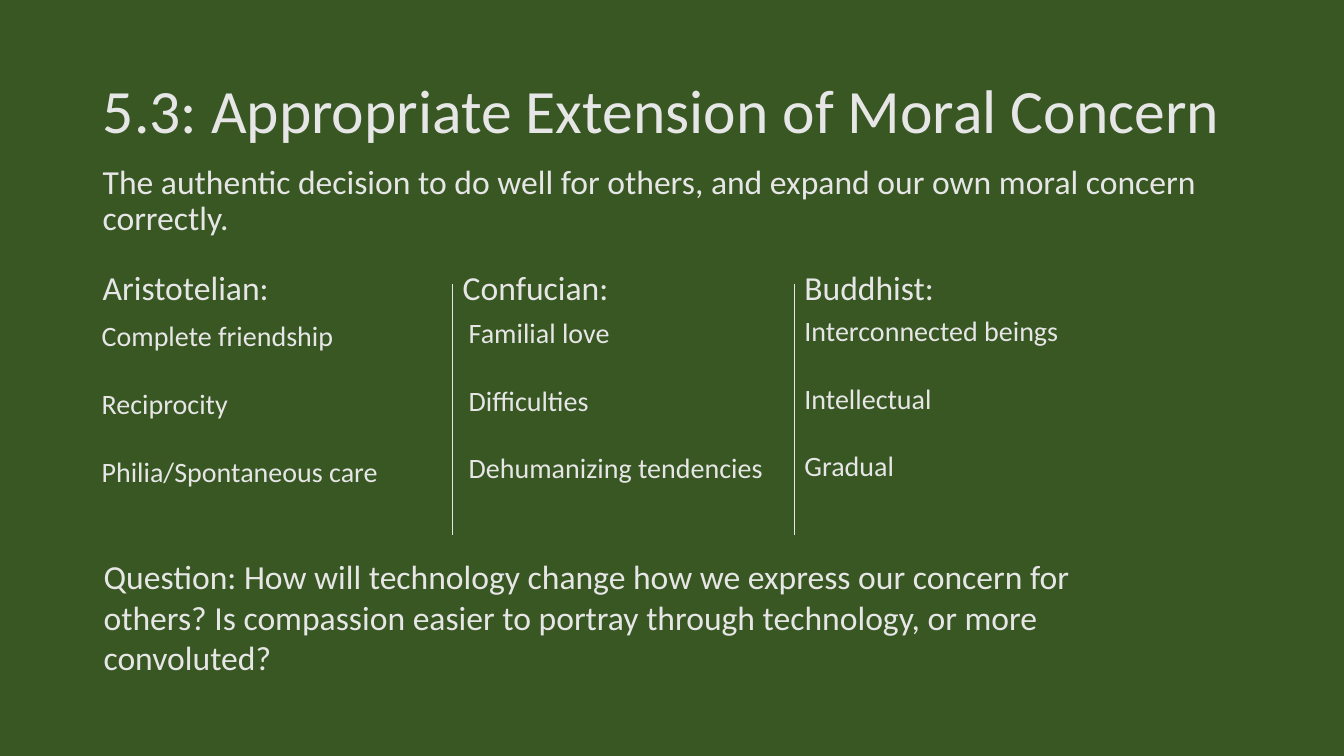
"""Build the slide on the appropriate extension of moral concern."""
from lxml import etree
from pptx import Presentation
from pptx.dml.color import RGBColor
from pptx.enum import shapes, text
from pptx.oxml.ns import qn
from pptx.util import Inches, Pt

TITLE = "5.3: Appropriate Extension of Moral Concern"
SUMMARY = ("The authentic decision to do well for others, and expand our own "
           "moral concern correctly.")
TRADITIONS = [
    {"name": "Aristotelian:", "head": (0.92, 1.94), "list": (0.91, 3.11, 2.97),
     "points": ["Complete friendship", "Reciprocity", "Philia/Spontaneous care"]},
    {"name": "Confucian:", "head": (4.49, 1.75), "list": (4.55, 3.08, 3.15),
     "points": ["Familial love", "Difficulties", "Dehumanizing tendencies"]},
    {"name": "Buddhist:", "head": (7.88, 1.5), "list": (7.88, 3.06, 2.74),
     "points": ["Interconnected beings", "Intellectual", "Gradual"]},
]
QUESTION = ("Question: How will technology change how we express our concern for "
            "others? Is compassion easier to portray through technology, or more "
            "convoluted?")

THEME = {
    "font": "Calibri", "ink": RGBColor.from_string("E7E6E6"),
    "ground": RGBColor.from_string("385723"),
    "title": Pt(44), "body": Pt(24), "point": Pt(20), "gap": Pt(24.4), "rule": Pt(0.5),
}
HEAD_TOP, HEAD_H, LIST_H = 2.6, 0.5, 1.78
RULE_TOP, RULE_BOTTOM = 2.82, 5.31
FIT, FIXED = text.MSO_AUTO_SIZE.SHAPE_TO_FIT_TEXT, text.MSO_AUTO_SIZE.NONE
TIGHT = {"line_spacing": 0.9}


def assign(target, values):
    """Set each attribute of target named in values."""
    for name, value in values.items():
        setattr(target, name, value)


def write(sp, lines, size, frame, para, gap=None):
    """Fill a shape with formatted paragraphs, spaced by gap after the first."""
    tf = sp.text_frame
    assign(tf, frame)
    for i, line in enumerate(lines):
        p = tf.add_paragraph() if i else tf.paragraphs[0]
        assign(p, {"alignment": text.PP_ALIGN.LEFT, **para})
        if i and gap is not None:
            p.space_before = gap
        r = p.add_run()
        r.text = line
        assign(r.font, {"name": THEME["font"], "size": THEME[size]})
        r.font.color.rgb = THEME["ink"]


def add_text(slide, box, lines, size="body", wrap=True, fit=FIT, para=None, gap=None):
    """Add a text box at box, given in inches."""
    sp = slide.shapes.add_textbox(*map(Inches, box))
    write(sp, lines, size, {"word_wrap": wrap, "auto_size": fit}, para or {}, gap)


def add_rule(slide, x):
    """Add a thin vertical divider at x."""
    ends = map(Inches, (x, RULE_TOP, x, RULE_BOTTOM))
    line = slide.shapes.add_connector(shapes.MSO_CONNECTOR.STRAIGHT, *ends)
    line.line.color.rgb = THEME["ink"]
    line.line.width = THEME["rule"]
    etree.SubElement(line._element.spPr, qn("a:effectLst"))


def main():
    """Lay out the slide and save it."""
    prs = Presentation()
    assign(prs, {"slide_width": Inches(13.33), "slide_height": Inches(7.5)})
    slide = prs.slides.add_slide(prs.slide_layouts[5])
    slide.background.fill.solid()
    slide.background.fill.fore_color.rgb = THEME["ground"]

    title = slide.shapes.title
    place = zip(("left", "top", "width", "height"), map(Inches, (0.92, 0.4, 11.5, 1.45)))
    assign(title, dict(place))
    write(title, [TITLE], "title", {"word_wrap": True, "auto_size": FIXED,
          "vertical_anchor": text.MSO_ANCHOR.MIDDLE}, TIGHT)
    add_text(slide, (0.92, 1.59, 11.5, 0.87), [SUMMARY], fit=FIXED,
             para={**TIGHT, "space_before": Pt(10)})

    for i, item in enumerate(TRADITIONS):
        x, width = item["head"]
        add_text(slide, (x, HEAD_TOP, width, HEAD_H), [item["name"]], wrap=False)
        add_text(slide, (*item["list"], LIST_H), item["points"], "point",
                 wrap=False, gap=THEME["gap"])
        if i:
            add_rule(slide, x)

    add_text(slide, (0.93, 5.47, 10.64, 1.31), [QUESTION])
    prs.save("out.pptx")


if __name__ == "__main__":
    main()
